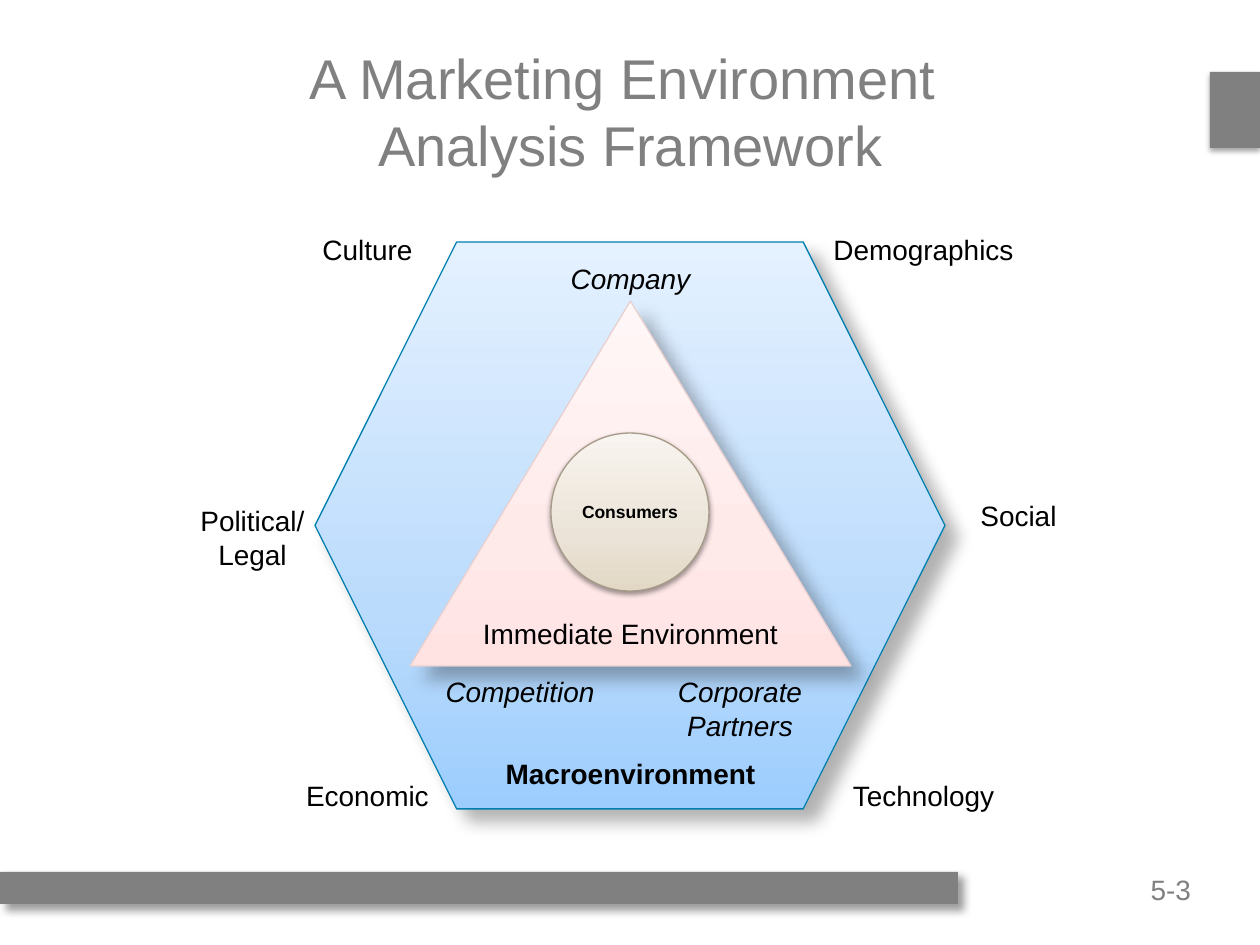
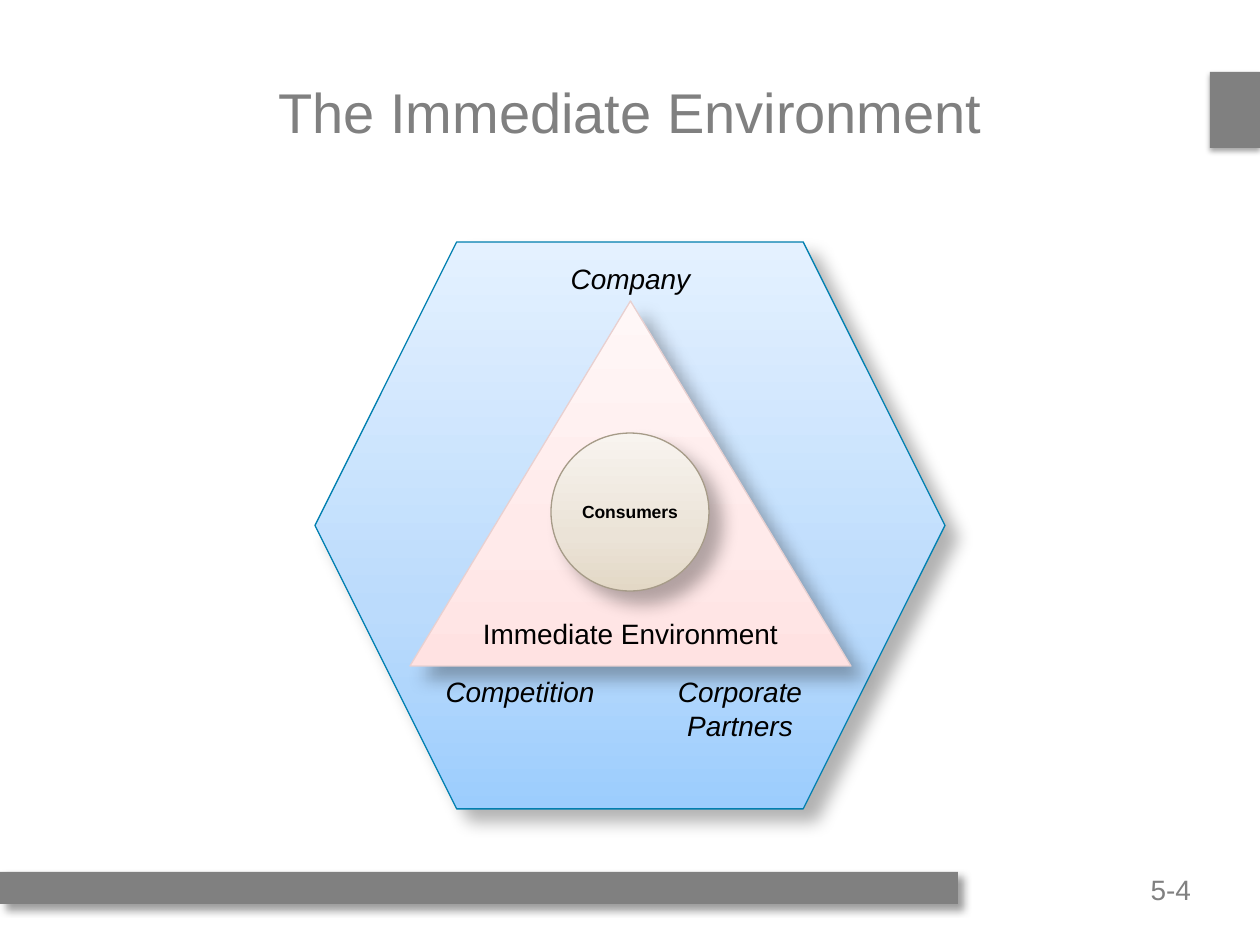
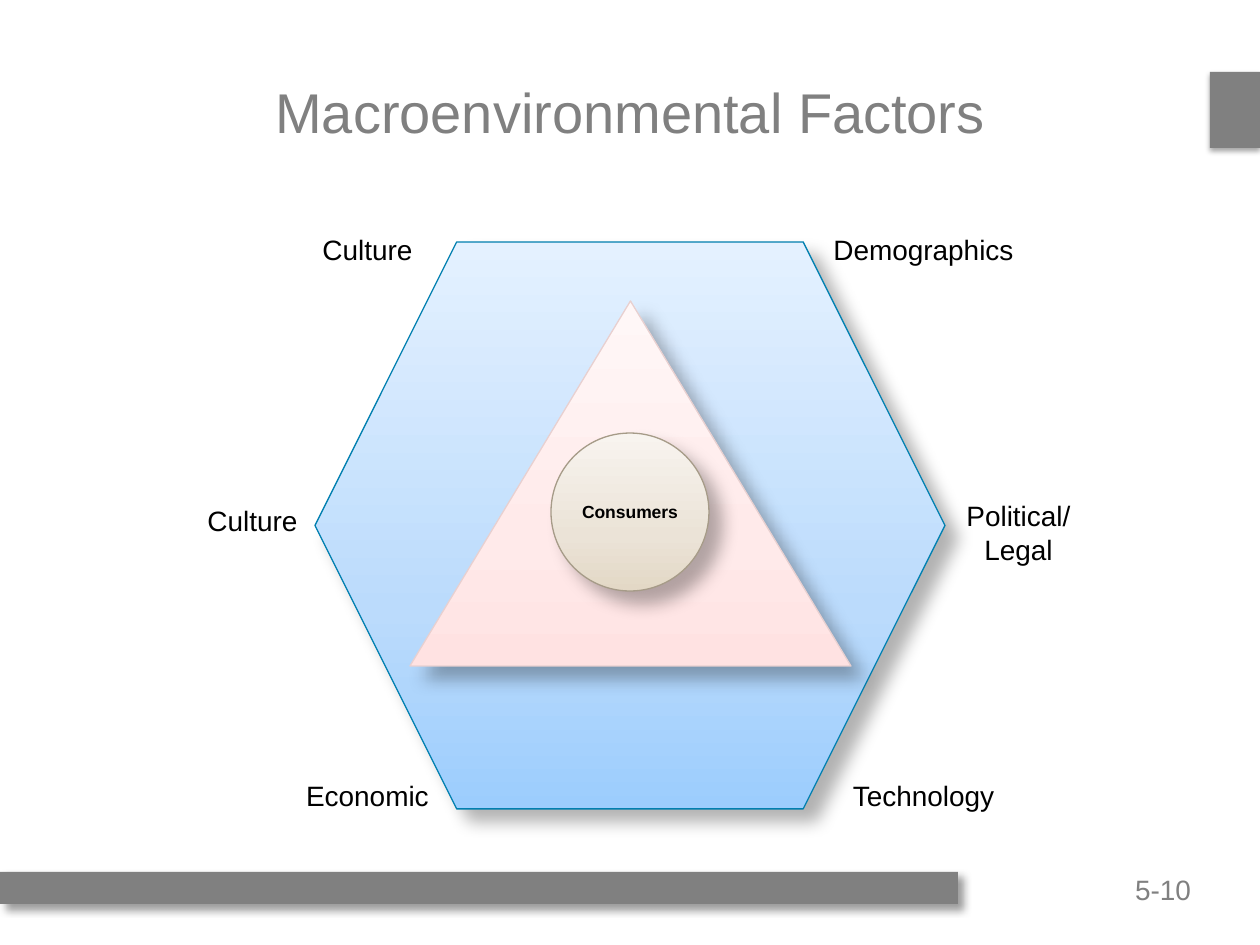
from dataclasses import dataclass
from typing import NamedTuple

from lxml import etree
from pptx import Presentation
from pptx.dml.color import RGBColor
from pptx.enum.shapes import MSO_SHAPE
from pptx.enum.text import MSO_ANCHOR, MSO_AUTO_SIZE, PP_ALIGN
from pptx.oxml.ns import qn
from pptx.util import Emu, Pt

RECTANGLE = MSO_SHAPE.RECTANGLE
HEXAGON = MSO_SHAPE.HEXAGON
TRIANGLE = MSO_SHAPE.ISOSCELES_TRIANGLE
OVAL = MSO_SHAPE.OVAL
CENTER, RIGHT = PP_ALIGN.CENTER, PP_ALIGN.RIGHT
TOP, MIDDLE = MSO_ANCHOR.TOP, MSO_ANCHOR.MIDDLE
NO_AUTOSIZE = MSO_AUTO_SIZE.NONE

PX_PER_INCH = 126
EMU_PER_INCH = 914400
TITLE_ONLY = 5
FONT = "Arial"
COLORS = {
    "paper": "FFFFFF",
    "gray": "808080",
    "ink": "000000",
    "blue_line": "007FAF",
    "pink_line": "E8D0D0",
    "sand_line": "A69B88",
}


class Box(NamedTuple):
    """Left, top, width and height in px."""
    left: int
    top: int
    width: int
    height: int


class Shadow(NamedTuple):
    """Opacity in percent, blur and distance in points, angle in degrees."""
    opacity: int
    blur: float
    distance: float
    angle: int


class Gradient(NamedTuple):
    """Colors from the bottom to the top."""
    bottom: str
    middle: str
    top: str


@dataclass(frozen=True)
class Figure:
    kind: MSO_SHAPE
    box: Box
    shadow: Shadow
    gradient: Gradient | None = None
    line: str = ""


@dataclass(frozen=True)
class Label:
    text: str
    box: Box
    size: int = 16
    color: str = "ink"
    bold: bool = False
    italic: bool = False
    align: PP_ALIGN = CENTER


@dataclass(frozen=True)
class Page:
    title: str
    number: str
    outer_labels: tuple[Label, ...]
    inner_labels: tuple[Label, ...]
    circle_shadow: Shadow


# Shared look
DEEP_SHADOW = Shadow(30, 10, 10, 45)
LOW_SHADOW = Shadow(38, 3.1, 1.6, 90)
TITLE_BOX = Box(76, 32, 1109, 158)
NUMBER_BOX = Box(945, 872, 246, 32)
BANDS = (
    Figure(RECTANGLE, Box(1210, 72, 50, 76), Shadow(35, 3.1, 1.8, 90)),
    Figure(RECTANGLE, Box(0, 872, 958, 32), Shadow(38, 5, 4, 45)),
)

# Framework figures
MACRO_HEXAGON = Figure(HEXAGON, Box(315, 242, 630, 567), DEEP_SHADOW,
                       Gradient("9CCDFD", "BBDBFC", "E4F1FF"), "blue_line")
IMMEDIATE_TRIANGLE = Figure(TRIANGLE, Box(410, 301, 441, 365), DEEP_SHADOW,
                            Gradient("FFE2E2", "FFEAEA", "FFF7F7"), "pink_line")
CONSUMER_BOX = Box(551, 433, 158, 158)
CONSUMER_GRADIENT = Gradient("E3D8C6", "EBE3D7", "F8F4EF")
CONSUMER_LABEL = Label("Consumers", CONSUMER_BOX, size=10, bold=True)

# Labels around and inside the hexagon
LABEL_HEIGHT = 50
CORNER_WIDTH = 189
LEFT_CORNER, RIGHT_CORNER = 273, 829
TOP_CORNER, BOTTOM_CORNER = 233, 779


def outer_label(text: str, left: int, top: int) -> Label:
    return Label(text, Box(left, top, CORNER_WIDTH, LABEL_HEIGHT))


def outer_labels(left_text: str, right_text: str) -> tuple[Label, ...]:
    return (
        outer_label("Culture", LEFT_CORNER, TOP_CORNER),
        outer_label("Demographics", RIGHT_CORNER, TOP_CORNER),
        outer_label(right_text, 924, 499),
        outer_label("Technology", RIGHT_CORNER, BOTTOM_CORNER),
        outer_label("Economic", LEFT_CORNER, BOTTOM_CORNER),
        outer_label(left_text, 158, 504),
    )


MACRO_LABEL = Label("Macroenvironment", Box(410, 757, 441, LABEL_HEIGHT), bold=True)
IMMEDIATE_LABELS = (
    Label("Immediate Environment", Box(410, 617, 441, LABEL_HEIGHT)),
    Label("Corporate\nPartners", Box(630, 675, 220, LABEL_HEIGHT), italic=True),
    Label("Competition", Box(410, 675, 220, LABEL_HEIGHT), italic=True),
    Label("Company", Box(410, 262, 441, LABEL_HEIGHT), italic=True),
)

PAGES = (
    Page("A Marketing Environment \nAnalysis Framework", "5-3",
         (MACRO_LABEL, *outer_labels("Political/\nLegal", "Social")),
         IMMEDIATE_LABELS, LOW_SHADOW),
    Page("The Immediate Environment", "5-4", (), IMMEDIATE_LABELS, DEEP_SHADOW),
    Page("Macroenvironmental Factors", "5-10",
         outer_labels("Culture", "Political/\nLegal"), (), DEEP_SHADOW),
)


def px(length: int) -> Emu:
    return Emu(round(length * EMU_PER_INCH / PX_PER_INCH))


def place(box: Box) -> tuple[Emu, ...]:
    return tuple(px(length) for length in box)


def rgb(name: str) -> RGBColor:
    return RGBColor.from_string(COLORS[name])


def set_gradient(shape, gradient: Gradient) -> None:
    shape.fill.gradient()
    shape.fill.gradient_angle = 90
    stops = shape.element.spPr.find(".//" + qn("a:gsLst"))
    for stop in list(stops):
        stops.remove(stop)
    for percent, color in zip((0, 35, 100), gradient):
        stop = etree.SubElement(stops, qn("a:gs"), pos=str(percent * 1000))
        etree.SubElement(stop, qn("a:srgbClr"), val=color)


def set_shadow(shape, shadow: Shadow) -> None:
    shape.shadow.inherit = False
    effects = shape.element.spPr.find(qn("a:effectLst"))
    outer = etree.SubElement(
        effects, qn("a:outerShdw"), blurRad=str(Pt(shadow.blur)),
        dist=str(Pt(shadow.distance)), dir=str(shadow.angle * 60000),
        algn="ctr", rotWithShape="0")
    color = etree.SubElement(outer, qn("a:srgbClr"), val=COLORS["ink"])
    etree.SubElement(color, qn("a:alpha"), val=str(shadow.opacity * 1000))


def draw_figure(slide, figure: Figure):
    shape = slide.shapes.add_shape(figure.kind, *place(figure.box))
    if figure.gradient:
        set_gradient(shape, figure.gradient)
    else:
        shape.fill.solid()
        shape.fill.fore_color.rgb = rgb("gray")
    if figure.line:
        shape.line.color.rgb = rgb(figure.line)
        shape.line.width = Pt(0.75)
    else:
        shape.line.fill.background()
    set_shadow(shape, figure.shadow)
    return shape


def write(frame, label: Label, anchor: MSO_ANCHOR = TOP) -> None:
    frame.vertical_anchor = anchor
    frame.auto_size = NO_AUTOSIZE
    para = frame.paragraphs[0]
    para.text = label.text.replace("\n", "\v")
    para.alignment = label.align
    font = para.font
    font.name, font.size = FONT, Pt(label.size)
    font.bold, font.italic = label.bold, label.italic
    font.color.rgb = rgb(label.color)


def clear_margins(frame) -> None:
    frame.margin_left = frame.margin_right = 0
    frame.margin_top = frame.margin_bottom = 0


def draw_label(slide, label: Label, wrap: bool = False):
    frame = slide.shapes.add_textbox(*place(label.box)).text_frame
    clear_margins(frame)
    frame.word_wrap = wrap
    write(frame, label)
    return frame


def draw_title(slide, text: str) -> None:
    title = slide.shapes.title
    title.left, title.top, title.width, title.height = place(TITLE_BOX)
    write(title.text_frame, Label(text, TITLE_BOX, size=32, color="gray"), MIDDLE)


def draw_page(deck, page: Page) -> None:
    slide = deck.slides.add_slide(deck.slide_layouts[TITLE_ONLY])
    draw_title(slide, page.title)

    # Page number and bands
    number = Label(page.number, NUMBER_BOX, color="gray", align=RIGHT)
    draw_label(slide, number, wrap=True).paragraphs[0].line_spacing = 1.02
    for band in BANDS:
        draw_figure(slide, band)

    # Framework from the outside in
    draw_figure(slide, MACRO_HEXAGON)
    for label in page.outer_labels:
        draw_label(slide, label)
    draw_figure(slide, IMMEDIATE_TRIANGLE)
    for label in page.inner_labels:
        draw_label(slide, label)
    circle = draw_figure(slide, Figure(OVAL, CONSUMER_BOX, page.circle_shadow,
                                       CONSUMER_GRADIENT, "sand_line"))
    clear_margins(circle.text_frame)
    write(circle.text_frame, CONSUMER_LABEL, MIDDLE)


def main() -> None:
    deck = Presentation()
    deck.slide_width, deck.slide_height = px(1260), px(945)
    background = deck.slide_master.background.fill
    background.solid()
    background.fore_color.rgb = rgb("paper")
    for page in PAGES:
        draw_page(deck, page)
    deck.save("out.pptx")


if __name__ == "__main__":
    main()
